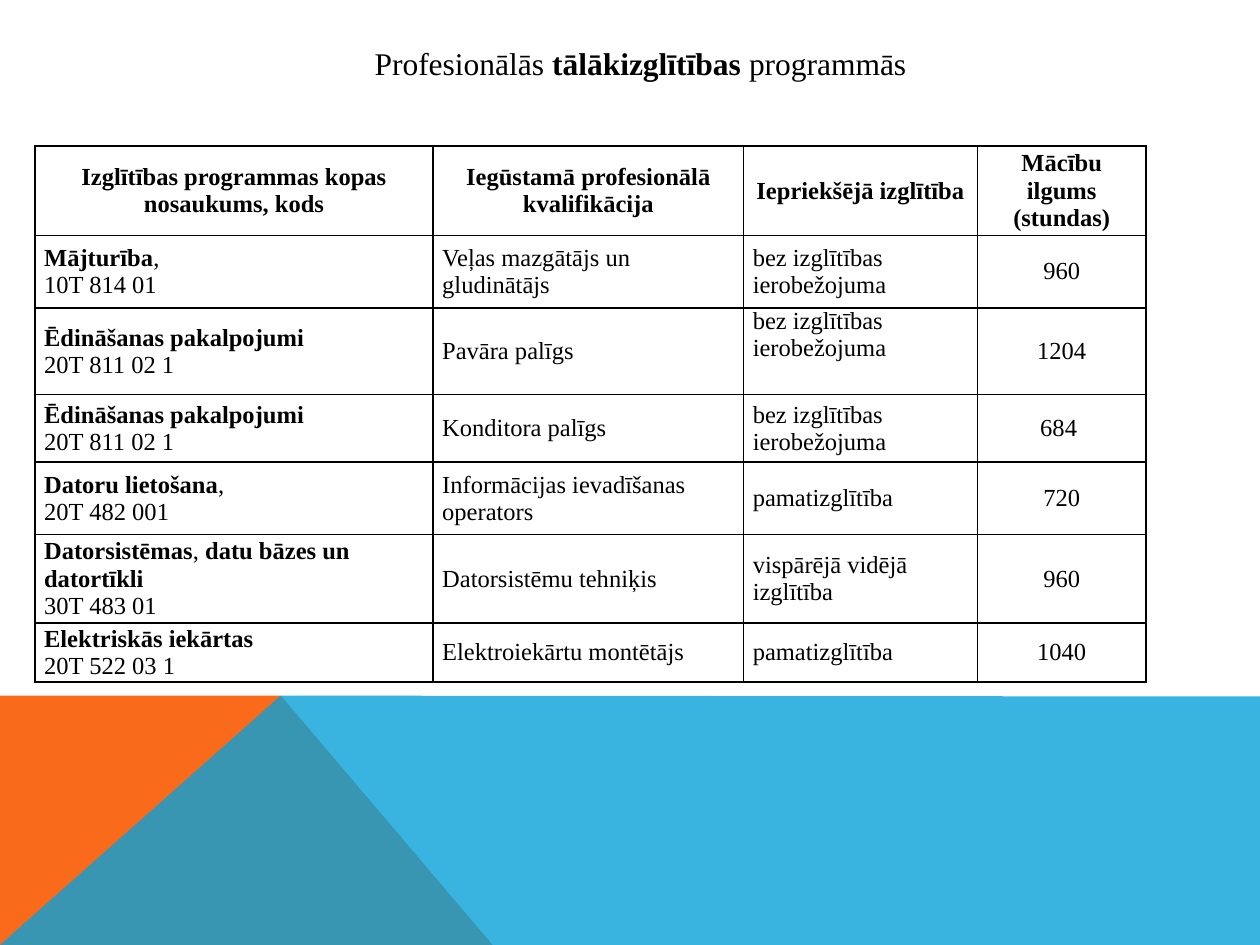
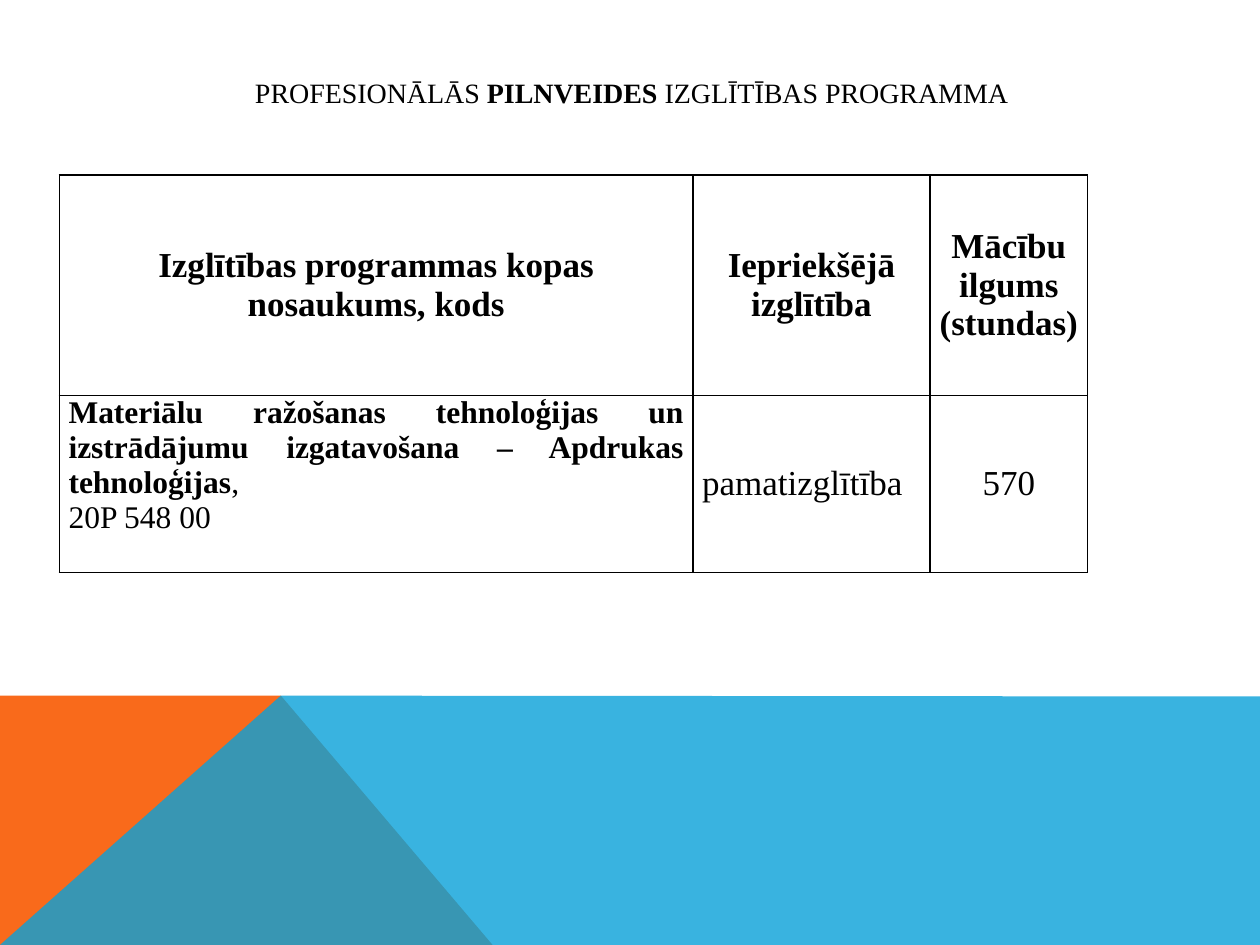
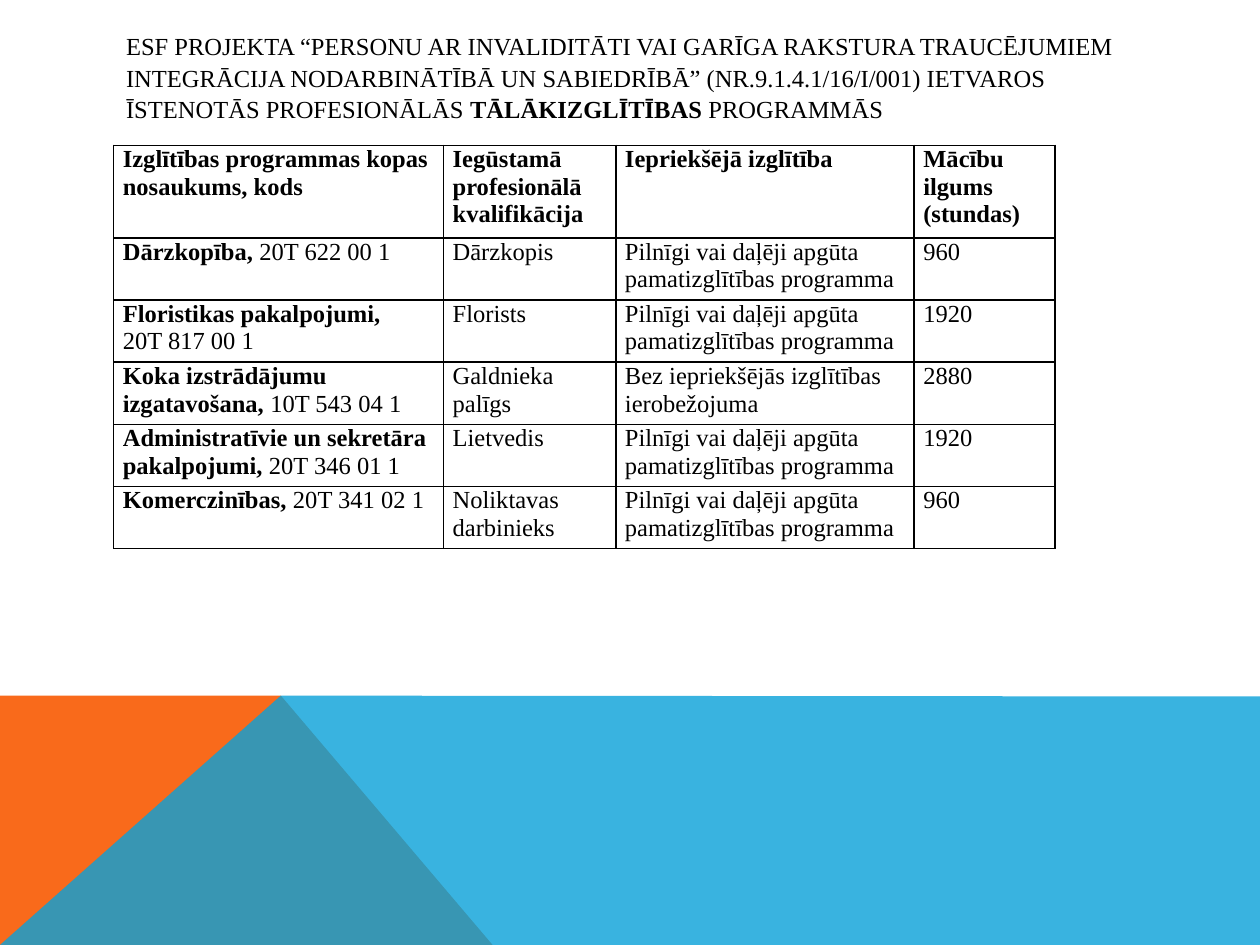
from lxml import etree
from pptx import Presentation
from pptx import util as u
from pptx.dml import color as c
from pptx.enum import text
from pptx.oxml import ns

BLACK = c.RGBColor(0x00, 0x00, 0x00)
ORANGE = c.RGBColor(0xF9, 0x6A, 0x1B)
BLUE = c.RGBColor(0x08, 0xA1, 0xD9)

LEFT = text.PP_ALIGN.LEFT
CENTER = text.PP_ALIGN.CENTER
JUSTIFY = text.PP_ALIGN.JUSTIFY
TOP = text.MSO_ANCHOR.TOP
MIDDLE = text.MSO_ANCHOR.MIDDLE

PROGRAMME = "*Izglītības programmas kopas nosaukums, kods*"
QUALIFICATION = "*Iegūstamā profesionālā kvalifikācija*"
EDUCATION = "*Iepriekšējā izglītība*"
DURATION = "*Mācību ilgums (stundas)*"
UNRESTRICTED = "bez izglītības ierobežojuma"
PRIMARY = "pamatizglītība"
PARTIAL_PRIMARY = "Pilnīgi vai daļēji apgūta pamatizglītības programma"


class Deck:
    font_name = "Times New Roman"
    width, height = 720, 540
    cell_inset = 5.2
    border_width = 1

    def __init__(self):
        self.presentation = Presentation()
        self.presentation.slide_width = u.Pt(self.width)
        self.presentation.slide_height = u.Pt(self.height)
        self.slide = None

    def add_slide(self):
        layout = self.presentation.slide_layouts[6]
        self.slide = self.presentation.slides.add_slide(layout)
        corner = (0, self.height)
        peak = (160.5, 397.5)
        self.polygon([corner, (0, 397.5), peak, (281.5, self.height)], ORANGE)
        self.polygon([corner, peak, (self.width, 398), (self.width, self.height)], BLUE, 80)

    def polygon(self, points, color, opacity=100):
        start, *others = [(u.Pt(x), u.Pt(y)) for x, y in points]
        builder = self.slide.shapes.build_freeform(*start)
        builder.add_line_segments(others)
        shape = builder.convert_to_shape()
        shape.shadow.inherit = False
        shape.line.fill.background()
        shape.fill.solid()
        shape.fill.fore_color.rgb = color
        if opacity < 100:
            color_element = shape.element.spPr.find(".//" + ns.qn("a:srgbClr"))
            etree.SubElement(color_element, ns.qn("a:alpha"), val=str(opacity * 1000))

    def fill_text(self, frame, content, size, alignment, spacing=1.0):
        frame.word_wrap = True
        for index, line in enumerate(content.split("\n")):
            paragraph = frame.add_paragraph() if index else frame.paragraphs[0]
            paragraph.alignment = alignment
            paragraph.line_spacing = spacing
            for position, piece in enumerate(line.split("*")):
                if piece:
                    run = paragraph.add_run()
                    run.text = piece
                    run.font.name = self.font_name
                    run.font.size = u.Pt(size)
                    run.font.bold = position % 2 == 1
                    run.font.color.rgb = BLACK

    def title(self, left, top, width, height, content, size, alignment=CENTER, spacing=1.0):
        box = self.slide.shapes.add_textbox(u.Pt(left), u.Pt(top), u.Pt(width), u.Pt(height))
        box.text_frame.vertical_anchor = MIDDLE
        self.fill_text(box.text_frame, content, size, alignment, spacing)

    def border(self, cell):
        properties = cell._tc.get_or_add_tcPr()
        for index, side in enumerate(("a:lnL", "a:lnR", "a:lnT", "a:lnB")):
            line = etree.Element(ns.qn(side), w=str(u.Pt(self.border_width)))
            fill = etree.SubElement(line, ns.qn("a:solidFill"))
            etree.SubElement(fill, ns.qn("a:srgbClr"), val=str(BLACK))
            properties.insert(index, line)

    def table(self, left, top, widths, heights, rows, size, header_alignment=CENTER,
              alignments=None, anchor=MIDDLE, spacing=1.0):
        frame = self.slide.shapes.add_table(
            len(heights), len(widths), u.Pt(left), u.Pt(top),
            u.Pt(sum(widths)), u.Pt(sum(heights)))
        table = frame.table
        table.first_row = table.horz_banding = False
        for column, width in zip(table.columns, widths):
            column.width = u.Pt(width)
        for row, height in zip(table.rows, heights):
            row.height = u.Pt(height)
        alignments = alignments or [LEFT] * (len(widths) - 1) + [CENTER]
        for row_index, contents in enumerate(rows):
            for column_index, content in enumerate(contents):
                cell = table.cell(row_index, column_index)
                cell.fill.background()
                cell.vertical_anchor = anchor
                cell.margin_left = cell.margin_right = u.Pt(self.cell_inset)
                cell.margin_top = cell.margin_bottom = 0
                self.border(cell)
                alignment = alignments[column_index] if row_index else header_alignment
                self.fill_text(cell.text_frame, content, size, alignment, spacing)
        return table


def further_education(deck):
    deck.add_slide()
    deck.title(54, 15, 624, 42, "Profesionālās *tālākizglītības *programmās", 18)
    table = deck.table(
        20, 83.5, [227.5, 177.5, 133.5, 96.5], [51, 41.5, 49.5, 38.5, 41.5, 46.5, 31], [
            (PROGRAMME, QUALIFICATION, EDUCATION, DURATION),
            ("*Mājturība*,\n10T 814 01", "Veļas mazgātājs un gludinātājs", UNRESTRICTED, "960"),
            ("*Ēdināšanas pakalpojumi*\n20T 811 02 1", "Pavāra palīgs", UNRESTRICTED, "1204"),
            ("*Ēdināšanas pakalpojumi*\n20T 811 02 1", "Konditora palīgs", UNRESTRICTED, "684 "),
            ("*Datoru lietošana*,\n20T 482 001", "Informācijas ievadīšanas operators",
             PRIMARY, "720"),
            ("*Datorsistēmas*, *datu bāzes un datortīkli*\n30T 483 01", "Datorsistēmu tehniķis",
             "vispārējā vidējā izglītība", "960"),
            ("*Elektriskās iekārtas*\n20T 522 03 1", "Elektroiekārtu montētājs",
             PRIMARY, "1040"),
        ], 14)
    table.cell(2, 2).vertical_anchor = TOP


def professional_development(deck):
    deck.add_slide()
    deck.title(65, 22.5, 592, 60.5, "PROFESIONĀLĀS* PILNVEIDES *IZGLĪTĪBAS PROGRAMMA", 16)
    table = deck.table(34, 100, [362, 135.5, 90], [126, 101], [
        (PROGRAMME, EDUCATION, DURATION),
        ("*Materiālu ražošanas tehnoloģijas un izstrādājumu izgatavošana – "
         "Apdrukas tehnoloģijas*,\n20P 548 00", PRIMARY, "570"),
    ], 20, alignments=[JUSTIFY, LEFT, CENTER])
    programme_cell = table.cell(1, 0)
    programme_cell.vertical_anchor = TOP
    for paragraph in programme_cell.text_frame.paragraphs:
        for run in paragraph.runs:
            run.font.size = u.Pt(18)


def integration_project(deck):
    deck.add_slide()
    deck.title(
        65, 15, 592, 57,
        "ESF PROJEKTA “PERSONU AR INVALIDITĀTI VAI GARĪGA RAKSTURA TRAUCĒJUMIEM "
        "INTEGRĀCIJA NODARBINĀTĪBĀ UN SABIEDRĪBĀ” (NR.9.1.4.1/16/I/001) IETVAROS "
        "ĪSTENOTĀS PROFESIONĀLĀS *TĀLĀKIZGLĪTĪBAS *PROGRAMMĀS", 14, LEFT, 1.08)
    deck.table(
        65, 83, [188.5, 98.5, 170.5, 80.5], [53] + [35.5] * 5, [
            (PROGRAMME, QUALIFICATION, EDUCATION, "*Mācību ilgums*\n*(stundas)*"),
            ("*Dārzkopība, *20T 622 00 1", "Dārzkopis", PARTIAL_PRIMARY, "960"),
            ("*Floristikas pakalpojumi,*\n20T 817 00 1", "Florists", PARTIAL_PRIMARY, "1920"),
            ("*Koka izstrādājumu izgatavošana, *10T 543 04 1", "Galdnieka palīgs",
             "Bez iepriekšējās izglītības ierobežojuma", "2880"),
            ("*Administratīvie un sekretāra pakalpojumi,* 20T 346 01 1", "Lietvedis",
             PARTIAL_PRIMARY, "1920"),
            ("*Komerczinības, *20T 341 02 1", "Noliktavas darbinieks", PARTIAL_PRIMARY, "960"),
        ], 14, LEFT, [LEFT] * 4, TOP, 1.02)


def main():
    deck = Deck()
    further_education(deck)
    professional_development(deck)
    integration_project(deck)
    deck.presentation.save("out.pptx")


if __name__ == "__main__":
    main()
